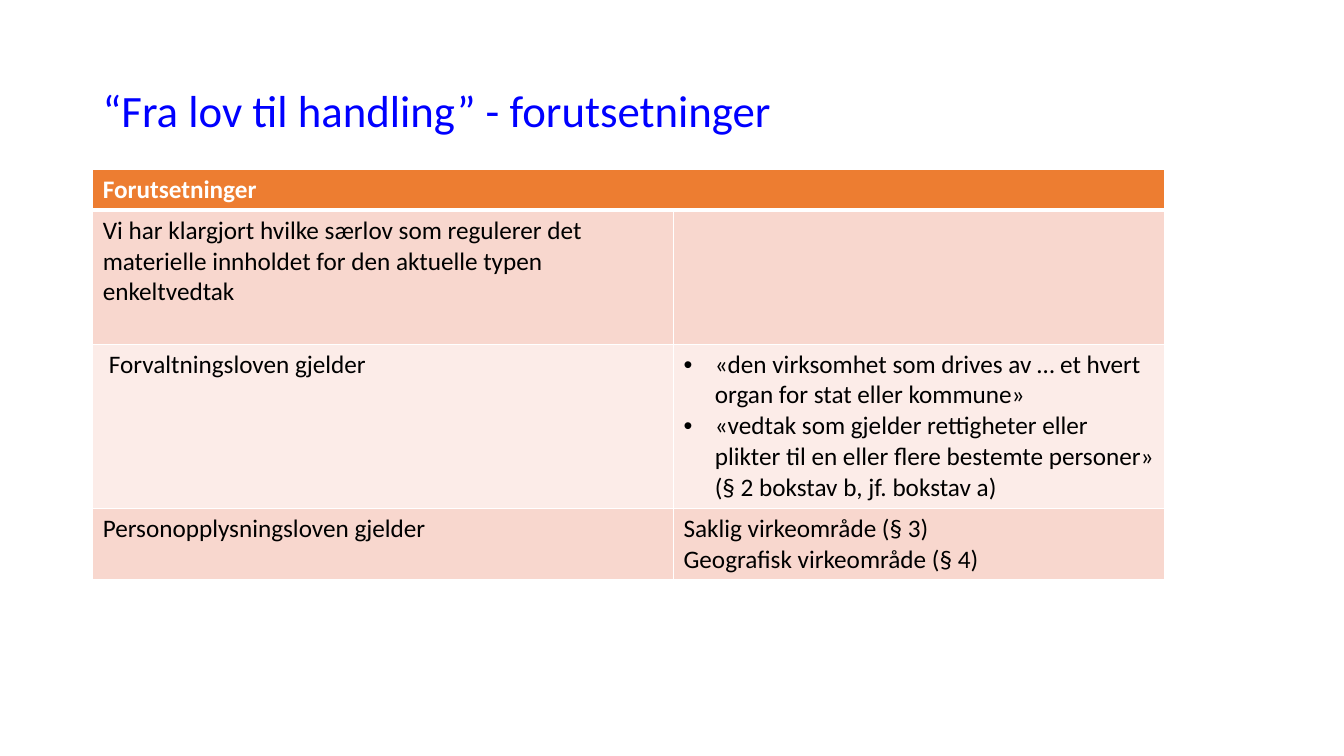
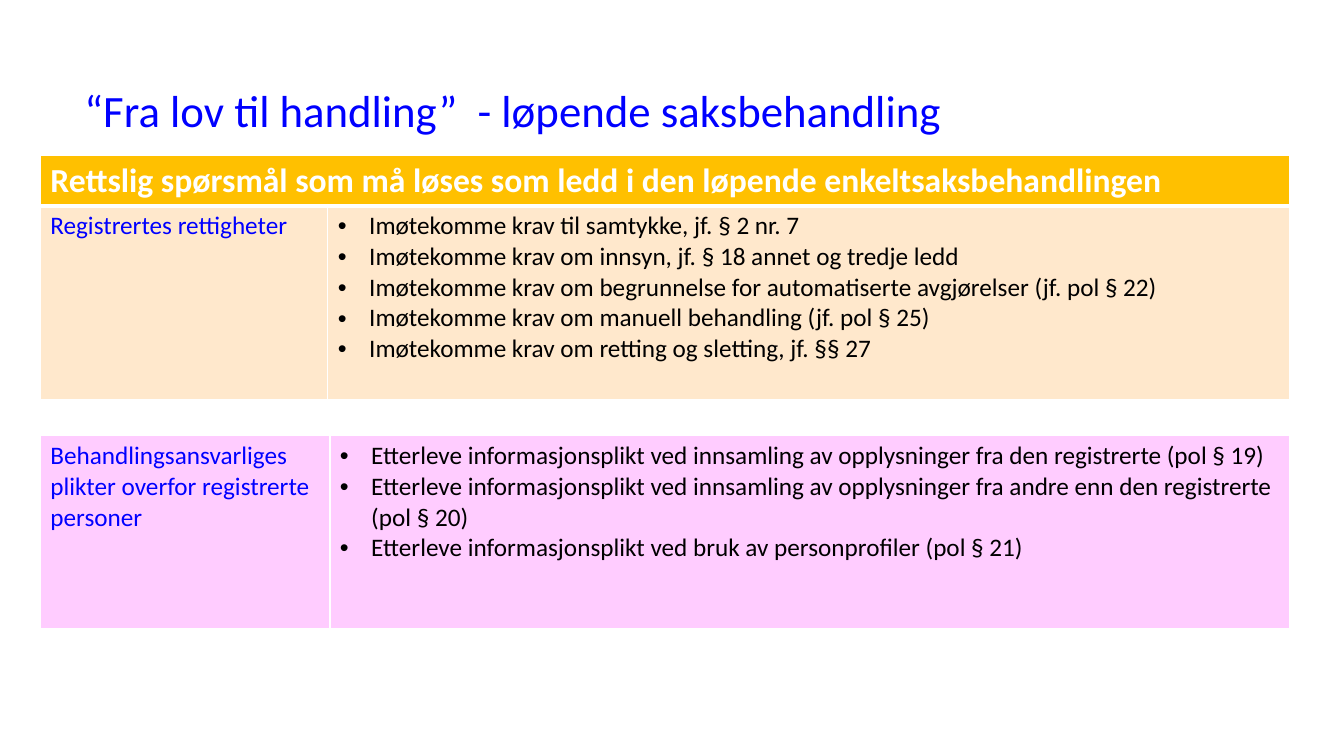
from dataclasses import dataclass

from lxml import etree
from pptx import Presentation
from pptx import util as u
from pptx.dml.color import RGBColor
from pptx.enum import text
from pptx.oxml.ns import qn


@dataclass(frozen=True)
class Theme:
    """Colours, font and type sizes shared by the slides."""
    font: str = "Calibri"
    blue: str = "0000FF"
    black: str = "000000"
    white: str = "FFFFFF"
    orange: str = "ED7D31"
    salmon: str = "F8D7CE"
    blush: str = "FCECE8"
    gold: str = "FFC000"
    peach: str = "FFE8CC"
    pink: str = "FFCCFF"
    title: int = 32
    heading: int = 24
    body: int = 18
    rule: int = 1
    header_rule: int = 3
    hanging: float = 0.31


@dataclass(frozen=True)
class Box:
    """A region in percent of the slide's width and height."""
    left: float
    top: float
    width: float
    height: float

    def place(self):
        """Return left, top, width and height as lengths."""
        return (SLIDE_W * self.left / 100, SLIDE_H * self.top / 100,
                SLIDE_W * self.width / 100, SLIDE_H * self.height / 100)


@dataclass(frozen=True)
class Entry:
    """The lines of one table cell and their style."""
    lines: tuple = ("",)
    color: str = Theme.black
    size: int = Theme.body
    bold: bool = False
    bulleted: bool = False
    indent: float = 0


THEME = Theme()
SLIDE_W, SLIDE_H = u.Inches(13.33), u.Inches(7.5)


def style_font(font, size, color, bold=False):
    """Apply the shared typeface with a size, colour and weight."""
    font.name = THEME.font
    font.size = u.Pt(size)
    font.bold = bold
    font.color.rgb = RGBColor.from_string(color)


def indent_paragraph(paragraph, left, bulleted):
    """Indent a paragraph, with a hanging bullet if asked."""
    properties = paragraph._p.get_or_add_pPr()
    properties.set("marL", str(u.Inches(left)))
    if bulleted:
        properties.set("indent", str(-u.Inches(left)))
        etree.SubElement(properties, qn("a:buFont")).set("typeface", "Arial")
        etree.SubElement(properties, qn("a:buChar")).set("char", "•")


def rule_cell(cell, top, bottom):
    """Draw white rules around a cell."""
    properties = cell._tc.get_or_add_tcPr()
    sides = (("L", THEME.rule), ("R", THEME.rule), ("T", top), ("B", bottom))
    for position, (side, width) in enumerate(sides):
        line = etree.Element(qn(f"a:ln{side}"), w=str(u.Pt(width)))
        fill = etree.SubElement(line, qn("a:solidFill"))
        etree.SubElement(fill, qn("a:srgbClr")).set("val", THEME.white)
        properties.insert(position, line)


def fill_cell(cell, entry, fill):
    """Write an entry into a cell on a solid fill."""
    cell.fill.solid()
    cell.fill.fore_color.rgb = RGBColor.from_string(fill)
    cell.text_frame.text = "\n".join(entry.lines)
    indent = THEME.hanging if entry.bulleted else entry.indent
    for paragraph in cell.text_frame.paragraphs:
        indent_paragraph(paragraph, indent, entry.bulleted)
        style_font(paragraph.font, entry.size, entry.color, entry.bold)
        for run in paragraph.runs:
            style_font(run.font, entry.size, entry.color, entry.bold)


def add_title(slide, box, wording):
    """Place the blue title, centred vertically in its box."""
    frame = slide.shapes.add_textbox(*map(int, box.place())).text_frame
    frame.word_wrap = True
    frame.vertical_anchor = text.MSO_ANCHOR.MIDDLE
    frame.text = wording
    heading = frame.paragraphs[0]
    heading.line_spacing = 0.9
    style_font(heading.runs[0].font, THEME.title, THEME.blue)


def add_rows(slide, box, columns, heights, rows, header=False):
    """Place a table whose columns and rows share the box by weight."""
    left, top, width, height = map(int, box.place())
    table = slide.shapes.add_table(
        len(rows), len(columns), left, top, width, height).table
    table.first_row = table.horz_banding = False
    for column, weight in zip(table.columns, columns):
        column.width = int(width * weight / sum(columns))
    for row, weight in zip(table.rows, heights):
        row.height = int(height * weight / sum(heights))
    for r, (fill, entries) in enumerate(rows):
        above = THEME.header_rule if header and r == 1 else THEME.rule
        below = THEME.header_rule if header and r == 0 else THEME.rule
        for c, entry in enumerate(entries):
            fill_cell(table.cell(r, c), entry, fill)
            rule_cell(table.cell(r, c), above, below)
    if header:
        table.cell(0, 0).merge(table.cell(0, len(columns) - 1))


def header_row(fill, wording, size):
    """Return a header row with white bold text across two columns."""
    return fill, (Entry((wording,), THEME.white, size, True), Entry())


def build_conditions(slide):
    """Build the slide on the conditions that must hold."""
    add_rows(slide, Box(6.9, 22.4, 79.75, 54.2), (5.76, 4.87), (40, 133, 163, 71), (
        header_row(THEME.orange, "Forutsetninger", THEME.body),
        (THEME.salmon, (
            Entry(("Vi har klargjort hvilke særlov som regulerer det materielle "
                   "innholdet for den aktuelle typen enkeltvedtak",)),
            Entry())),
        (THEME.blush, (
            Entry(("Forvaltningsloven gjelder",), indent=0.06),
            Entry(("«den virksomhet som drives av … et hvert organ for stat "
                   "eller kommune»",
                   "«vedtak som gjelder rettigheter eller plikter til en eller "
                   "flere bestemte personer» (§ 2 bokstav b, jf. bokstav a)"),
                  bulleted=True))),
        (THEME.salmon, (
            Entry(("Personopplysningsloven gjelder",)),
            Entry(("Saklig virkeområde (§ 3)", "Geografisk virkeområde (§ 4)")))),
    ), header=True)
    add_title(slide, Box(6.9, 5.33, 86.25, 19.33),
              "“Fra lov til handling” - forutsetninger")


def build_casework(slide):
    """Build the slide on questions in running casework."""
    add_title(slide, Box(5.55, 5.33, 88.45, 19.33),
              "“Fra lov til handling”  - løpende saksbehandling")
    add_rows(slide, Box(3, 20.53, 92.95, 32.3), (2.85, 9.53), (50, 194), (
        header_row(THEME.gold, "Rettslig spørsmål som må løses som ledd i den "
                   "løpende enkeltsaksbehandlingen", THEME.heading),
        (THEME.peach, (
            Entry(("Registrertes rettigheter",), THEME.blue),
            Entry(("Imøtekomme krav til samtykke, jf. § 2 nr. 7",
                   "Imøtekomme krav om innsyn, jf. § 18 annet og tredje ledd",
                   "Imøtekomme krav om begrunnelse for automatiserte avgjørelser "
                   "(jf. pol § 22)",
                   "Imøtekomme krav om manuell behandling (jf. pol § 25)",
                   "Imøtekomme krav om retting og sletting, jf. §§ 27"),
                  bulleted=True))),
    ), header=True)
    add_rows(slide, Box(3, 57.6, 92.95, 25.6), (2.87, 9.51), (1,), (
        (THEME.pink, (
            Entry(("Behandlingsansvarliges plikter overfor registrerte personer",),
                  THEME.blue),
            Entry(("Etterleve informasjonsplikt ved innsamling av opplysninger "
                   "fra den registrerte (pol § 19)",
                   "Etterleve informasjonsplikt ved innsamling av opplysninger "
                   "fra andre enn den registrerte (pol § 20)",
                   "Etterleve informasjonsplikt ved bruk av personprofiler "
                   "(pol § 21)"),
                  bulleted=True))),
    ))


def main():
    """Build and save the presentation."""
    deck = Presentation()
    deck.slide_width, deck.slide_height = SLIDE_W, SLIDE_H
    for build in (build_conditions, build_casework):
        build(deck.slides.add_slide(deck.slide_layouts[6]))
    deck.save("out.pptx")


if __name__ == "__main__":
    main()
